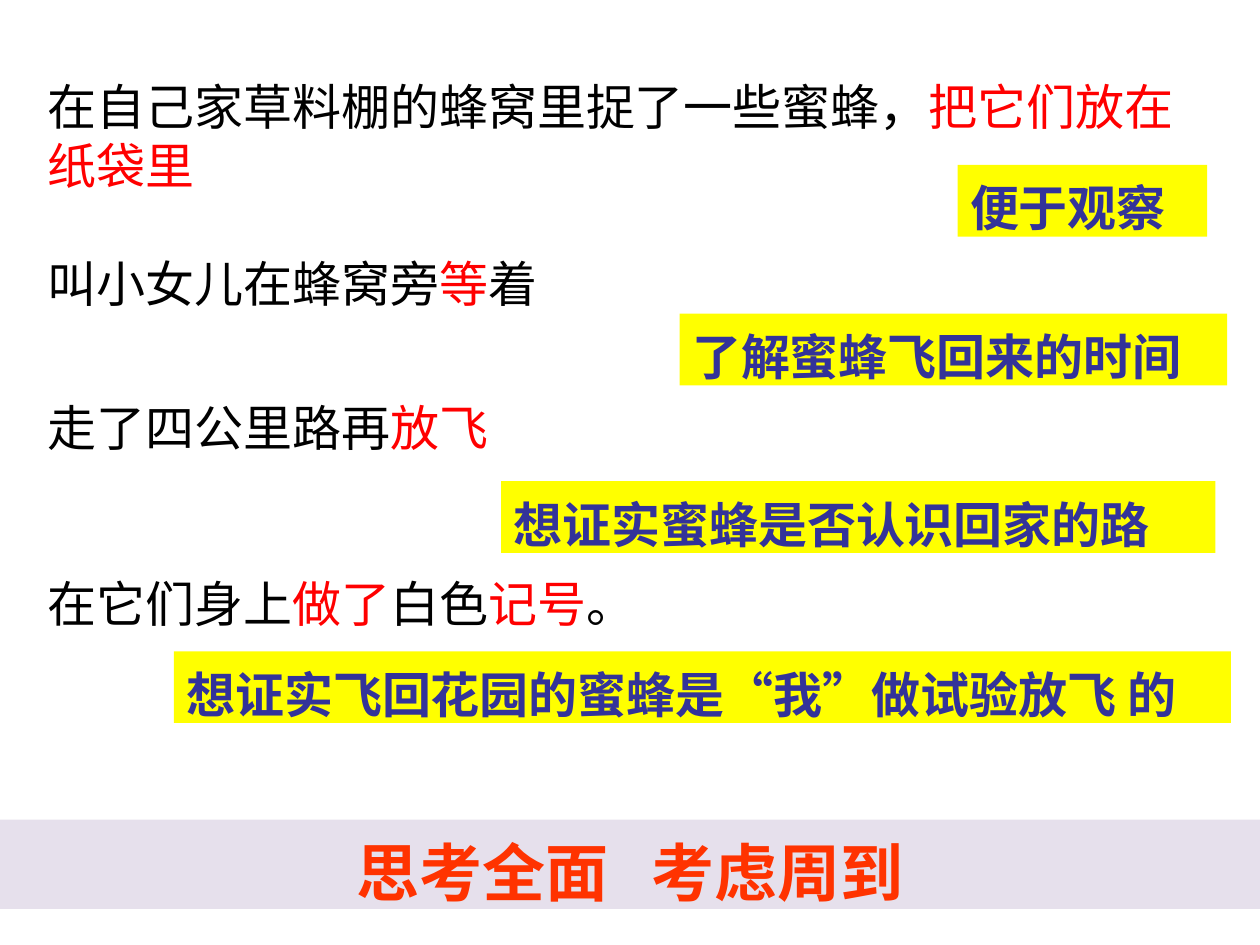
import pptx
import pptx.util
import pptx.dml.color
import pptx.enum.shapes
import pptx.enum.text
import pptx.oxml.ns
import lxml.etree

Pt = pptx.util.Pt
FONT = "Noto Sans CJK SC"


def color(value):
    return pptx.dml.color.RGBColor.from_string(value)


def add_span(para, text, size, value, bold=False):
    span = para.add_run()
    span.text = text
    span.font.size = Pt(size)
    span.font.name = FONT
    span.font.bold = bold
    span.font.color.rgb = color(value)
    east = lxml.etree.SubElement(span.font._element, pptx.oxml.ns.qn("a:ea"))
    east.set("typeface", FONT)
    para.line_spacing = Pt(size * 1.2)
    return span


deck = pptx.Presentation()
deck.slide_width = Pt(720)
deck.slide_height = Pt(540)
page = deck.slides.add_slide(deck.slide_layouts[6])

BLACK, RED = "000000", "FF0000"
steps = [
    (0, [("在自己家草料棚的蜂窝里捉了一些蜜蜂，", BLACK), ("把它们放在纸袋里", RED)]),
    (33.6, [("叫小女儿在蜂窝旁", BLACK), ("等", RED), ("着", BLACK)]),
    (48.6, [("走了四公里路再", BLACK), ("放飞", RED)]),
    (67, [("在它们身上", BLACK), ("做了", RED), ("白色", BLACK), ("记号", RED), ("。", BLACK)]),
]
story = page.shapes.add_textbox(Pt(20.2), Pt(35.3), Pt(669), Pt(472.3))
frame = story.text_frame
frame.word_wrap = True
frame.margin_top = Pt(8.7)
for index, (gap, parts) in enumerate(steps):
    para = frame.add_paragraph() if index else frame.paragraphs[0]
    para.space_before = Pt(gap)
    for text, value in parts:
        add_span(para, text, 28, value)

NOTE = (41, "FFFF00", 28, "333399")
BANNER = (51, "E6E0EC", 36, "FF3300")
bands = [
    (547.2, 94.3, 142.6, NOTE, ["便于观察"]),
    (99.4, 372.2, 604, NOTE, ["想证实飞回花园的蜜蜂是“我”做试验放飞 的"]),
    (286.4, 275, 408.2, NOTE, ["想证实蜜蜂是否认识回家的路"]),
    (388.4, 179.3, 312.8, NOTE, ["了解蜜蜂飞回来的时间"]),
    (0, 468.4, 720, BANNER, ["思考全面", " ", "考虑周到"]),
]
for left, top, width, (height, fill, size, ink), texts in bands:
    box = page.shapes.add_shape(
        pptx.enum.shapes.MSO_SHAPE.RECTANGLE, Pt(left), Pt(top), Pt(width), Pt(height)
    )
    box.shadow.inherit = False
    box.fill.solid()
    box.fill.fore_color.rgb = color(fill)
    box.line.fill.background()
    frame = box.text_frame
    frame.word_wrap = True
    frame.vertical_anchor = pptx.enum.text.MSO_ANCHOR.TOP
    frame.margin_top = Pt(height - size * 1.2)
    frame.margin_bottom = 0
    para = frame.paragraphs[0]
    centred = len(texts) > 1
    para.alignment = pptx.enum.text.PP_ALIGN.CENTER if centred else pptx.enum.text.PP_ALIGN.LEFT
    for text in texts:
        span = add_span(para, text, size, ink, True)
        if text == " ":
            span.font._element.set("spc", "1600")

deck.save("out.pptx")
